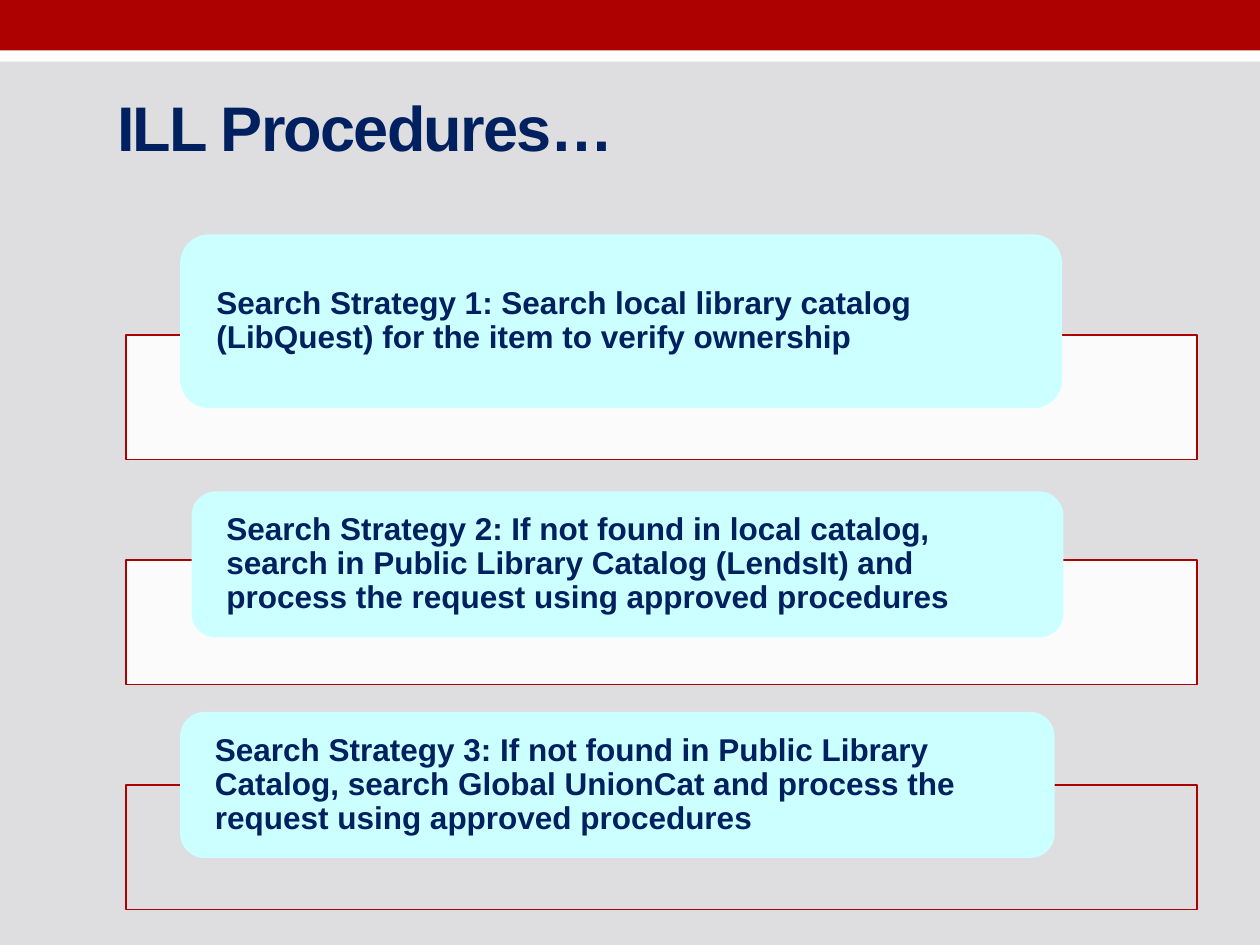
import pptx
import pptx.util
import pptx.dml.color
import pptx.enum.shapes
import pptx.enum.text
import pptx.oxml
import pptx.oxml.ns

Inches = pptx.util.Inches
SHAPE = pptx.enum.shapes.MSO_SHAPE
ALIGN = pptx.enum.text.PP_ALIGN
MIDDLE = pptx.enum.text.MSO_ANCHOR.MIDDLE

COLORS = {"background": "DEDEE0", "red": "AD0101", "white": "FFFFFF",
          "cyan": "CCFFFF", "navy": "002060"}
TITLE = "ILL Procedures…"
BANDS = [("white", 0.24, 0.25), ("red", 0, 0.4)]
STRATEGIES = [
    {"text": "Search Strategy 1: Search local library catalog (LibQuest) "
             "for the item to verify ownership",
     "box": (1.43, 1.86, 7, 1.38), "frame_fill": "white"},
    {"text": "Search Strategy 2: If not found in local catalog, search in Public "
             "Library Catalog (LendsIt) and process the request using approved procedures",
     "box": (1.52, 3.9, 6.92, 1.16), "frame_fill": "white"},
    {"text": "Search Strategy 3: If not found in Public Library Catalog, search "
             "Global UnionCat and process the request using approved procedures",
     "box": (1.43, 5.65, 6.94, 1.16), "frame_fill": None},
]
FRAME_TOP, FRAME_STEP = 2.66, 1.785
FRAME_ALPHA = 90
TITLE_FRAME = {"word_wrap": True, "vertical_anchor": MIDDLE}
BOX_FRAME = {**TITLE_FRAME, "margin_left": Inches(0.22), "margin_right": Inches(0.22),
             "margin_top": 0, "margin_bottom": 0}


def rgb(name):
    return pptx.dml.color.RGBColor.from_string(COLORS[name])


def set_all(target, values):
    for name, value in values.items():
        setattr(target, name, value)


def add_block(slide, kind, box, fill, line=None):
    shape = slide.shapes.add_shape(kind, *map(Inches, box))
    shape.shadow.inherit = False
    if fill:
        shape.fill.solid()
        shape.fill.fore_color.rgb = rgb(fill)
    else:
        shape.fill.background()
    if line:
        shape.line.color.rgb = rgb(line)
        shape.line.width = pptx.util.Pt(0.75)
    else:
        shape.line.fill.background()
    return shape


def set_alpha(shape, percent):
    color = shape.fill._xPr.find(".//" + pptx.oxml.ns.qn("a:srgbClr"))
    alpha = pptx.oxml.parse_xml(
        f'<a:alpha {pptx.oxml.ns.nsdecls("a")} val="{percent * 1000}"/>')
    color.append(alpha)


def write_text(shape, text, size, frame_format, line_spacing):
    set_all(shape.text_frame, frame_format)
    paragraph = shape.text_frame.paragraphs[0]
    set_all(paragraph, {"alignment": ALIGN.LEFT, "line_spacing": line_spacing})
    run = paragraph.add_run()
    run.text = text
    set_all(run.font, {"name": "Arial", "size": pptx.util.Pt(size), "bold": True})
    run.font.color.rgb = rgb("navy")
    return run


def main():
    presentation = pptx.Presentation()
    set_all(presentation, {"slide_width": Inches(10), "slide_height": Inches(7.5)})
    slide = presentation.slides.add_slide(presentation.slide_layouts[5])
    slide.background.fill.solid()
    slide.background.fill.fore_color.rgb = rgb("background")

    for color, top, height in BANDS:
        add_block(slide, SHAPE.RECTANGLE, (0, top, 10, height), color)

    title = slide.shapes.title
    set_all(title, {"left": Inches(0.83), "top": Inches(0.5),
                    "width": Inches(9), "height": Inches(1)})
    title_run = write_text(title, TITLE, 36, TITLE_FRAME, 1.0)
    title_run.font._element.set("spc", "-100")

    for index, strategy in enumerate(STRATEGIES):
        frame_box = (1, FRAME_TOP + index * FRAME_STEP, 8.5, 0.99)
        frame = add_block(slide, SHAPE.RECTANGLE, frame_box, strategy["frame_fill"], "red")
        if strategy["frame_fill"]:
            set_alpha(frame, FRAME_ALPHA)
        box = add_block(slide, SHAPE.ROUNDED_RECTANGLE, strategy["box"], "cyan")
        write_text(box, strategy["text"], 18, BOX_FRAME, 0.9)

    presentation.save("out.pptx")


if __name__ == "__main__":
    main()
